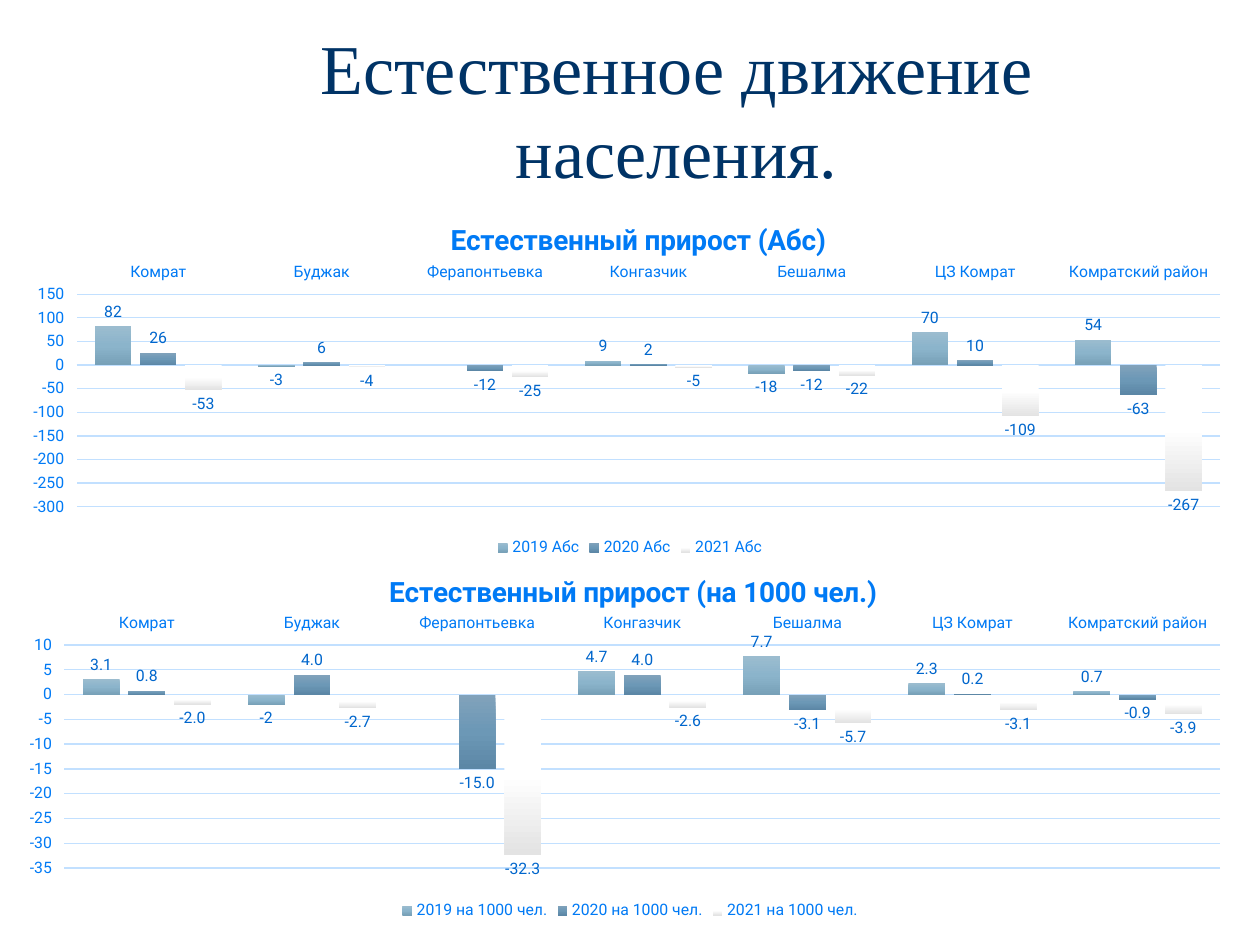
from dataclasses import dataclass

from lxml import etree
from pptx import Presentation
from pptx.chart.data import CategoryChartData
from pptx.dml.color import RGBColor
from pptx.enum.chart import (XL_CHART_TYPE, XL_LABEL_POSITION, XL_LEGEND_POSITION,
                             XL_TICK_LABEL_POSITION, XL_TICK_MARK)
from pptx.enum.text import MSO_ANCHOR, MSO_AUTO_SIZE, PP_ALIGN
from pptx.oxml import parse_xml
from pptx.oxml.ns import nsdecls, qn
from pptx.util import Inches, Pt

COLUMNS = XL_CHART_TYPE.COLUMN_CLUSTERED
OUTSIDE = XL_LABEL_POSITION.OUTSIDE_END
BOTTOM = XL_LEGEND_POSITION.BOTTOM
HIGH = XL_TICK_LABEL_POSITION.HIGH
LOW = XL_TICK_LABEL_POSITION.LOW
NO_TICK = XL_TICK_MARK.NONE
MIDDLE = MSO_ANCHOR.MIDDLE
CENTER = PP_ALIGN.CENTER


@dataclass(frozen=True)
class Theme:
    serif: str = "Times New Roman"
    sans: str = "Roboto"
    navy: str = "003366"
    blue: str = "007AF5"
    label: str = "0066CC"
    grid: str = "C2E0FF"
    head: int = 40
    title: int = 16
    base: int = 10
    small: int = 9
    # Top, middle and bottom colours of the columns of each year
    fills: tuple = (("9BBCCF", "8BB4CB", "78A1B8"),
                    ("81A2BB", "6C98B6", "5C87A6"),
                    ("FFFFFF", "FFFFFF", "E3E3E3"))


THEME = Theme()
YEARS = (2019, 2020, 2021)
TOWNS = ("Комрат", "Буджак", "Ферапонтьевка", "Конгазчик", "Бешалма",
         "ЦЗ Комрат", "Комратский район")

# Frame: left, top, width, height in inches; plot and spot: shares of the frame
CHARTS = (
    dict(title="Естественный прирост (Абс)", unit="Абс",
         frame=(0.12, 1.55, 9.76, 2.91), scale=(-300, 150, 50),
         plot=(0.05, 0.27, 0.93, 0.58), spot=(0.35, 0.06),
         formats=("General", "General", "General"),
         rows=((82, -3, None, 9, -18, 70, 54),
               (26, 6, -12, 2, -12, 10, -63),
               (-53, -4, -25, -5, -22, -109, -267))),
    dict(title="Естественный прирост (на 1000 чел.)", unit="на 1000 чел.",
         frame=(0.12, 4.34, 9.76, 3), scale=(-35, 10, 5),
         plot=(0.04, 0.26, 0.94, 0.59), spot=(0.3, 0.06),
         formats=("General", "0.0", "0.0"),
         rows=((3.1, -2, None, 4.7, 7.7, 2.3, 0.7),
               (0.8, 4, -15, 4, -3.1, 0.2, -0.9),
               (-2, -2.7, -32.3, -2.6, -5.7, -3.1, -3.9))),
)


def style(font, size, color, name=THEME.sans, bold=False):
    font.size, font.name, font.bold = Pt(size), name, bold
    font.color.rgb = RGBColor.from_string(color)


def stroke(line, width):
    line.color.rgb = RGBColor.from_string(THEME.grid)
    line.width = Pt(width)


def place(owner, box, inner=False):
    """Give a chart part a fixed place, in shares of the chart frame."""
    layout = owner.find(qn("c:layout"))
    if layout is None:
        layout = parse_xml(f"<c:layout {nsdecls('c')}/>")
        before = owner.find(qn("c:tx"))
        owner.insert(0 if before is None else owner.index(before) + 1, layout)
    for child in list(layout):
        layout.remove(child)
    spot = etree.SubElement(layout, qn("c:manualLayout"))
    items = [("layoutTarget", "inner")] if inner else []
    items += [("xMode", "edge"), ("yMode", "edge"), *zip("xywh", box)]
    for tag, value in items:
        etree.SubElement(spot, qn(f"c:{tag}")).set("val", str(value))


def shade(series, colors):
    """Fill columns with a three-stop gradient from top to bottom."""
    stops = "".join(
        f'<a:gs pos="{i * 50000}"><a:srgbClr val="{color}"/></a:gs>'
        for i, color in enumerate(colors))
    props = series._element.get_or_add_spPr()
    props.insert(0, parse_xml(
        f'<a:gradFill {nsdecls("a")} rotWithShape="1"><a:gsLst>{stops}</a:gsLst>'
        '<a:lin ang="5400000" scaled="0"/></a:gradFill>'))
    series.format.line.fill.background()
    series.invert_if_negative = False


def set_axes(chart, scale):
    towns, values = chart.category_axis, chart.value_axis
    for axis, side in ((towns, HIGH), (values, LOW)):
        axis.major_tick_mark = axis.minor_tick_mark = NO_TICK
        axis.tick_label_position = side
        style(axis.tick_labels.font, THEME.small, THEME.blue)
    stroke(towns.format.line, 1)
    values.format.line.fill.background()
    values.minimum_scale, values.maximum_scale, values.major_unit = scale
    values.has_major_gridlines = True
    stroke(values.major_gridlines.format.line, 0.75)


def set_series(plot, formats):
    plot.gap_width, plot.overlap, plot.vary_by_categories = 100, -24, False
    for series, colors, form in zip(plot.series, THEME.fills, formats):
        shade(series, colors)
        labels = series.data_labels
        labels.show_value, labels.position = True, OUTSIDE
        labels.number_format, labels.number_format_is_linked = form, False
        style(labels.font, THEME.small, THEME.label)


def add_chart(slide, item):
    data = CategoryChartData()
    data.categories = TOWNS
    for year, row in zip(YEARS, item["rows"]):
        data.add_series(f"{year} {item['unit']}", row)
    frame = map(Inches, item["frame"])
    chart = slide.shapes.add_chart(COLUMNS, *frame, data).chart
    style(chart.font, THEME.base, THEME.navy)

    # Heading
    chart.has_title = True
    title = chart.chart_title
    run = title.text_frame.paragraphs[0].add_run()
    run.text = item["title"]
    style(run.font, THEME.title, THEME.blue, bold=True)
    title.include_in_layout = False
    place(title._element, item["spot"])

    # Plot
    set_axes(chart, item["scale"])
    set_series(chart.plots[0], item["formats"])
    place(chart._chartSpace.chart.plotArea, item["plot"], inner=True)

    # Legend
    chart.has_legend = True
    chart.legend.position = BOTTOM
    chart.legend.include_in_layout = False
    style(chart.legend.font, THEME.small, THEME.blue)


def set_title(slide, text):
    title = slide.shapes.title
    title.left, title.top = Inches(1.33), Inches(0.17)
    title.width, title.height = Inches(8.08), Inches(1.38)
    frame = title.text_frame
    frame.word_wrap, frame.auto_size = True, MSO_AUTO_SIZE.NONE
    frame.vertical_anchor = MIDDLE
    para = frame.paragraphs[0]
    para.alignment = CENTER
    run = para.add_run()
    run.text = text
    style(run.font, THEME.head, THEME.navy, THEME.serif)


def main():
    deck = Presentation()
    deck.slide_width, deck.slide_height = Inches(10), Inches(7.5)
    slide = deck.slides.add_slide(deck.slide_layouts[5])
    set_title(slide, "Естественное движение населения.")
    for item in CHARTS:
        add_chart(slide, item)
    deck.save("out.pptx")


if __name__ == "__main__":
    main()
